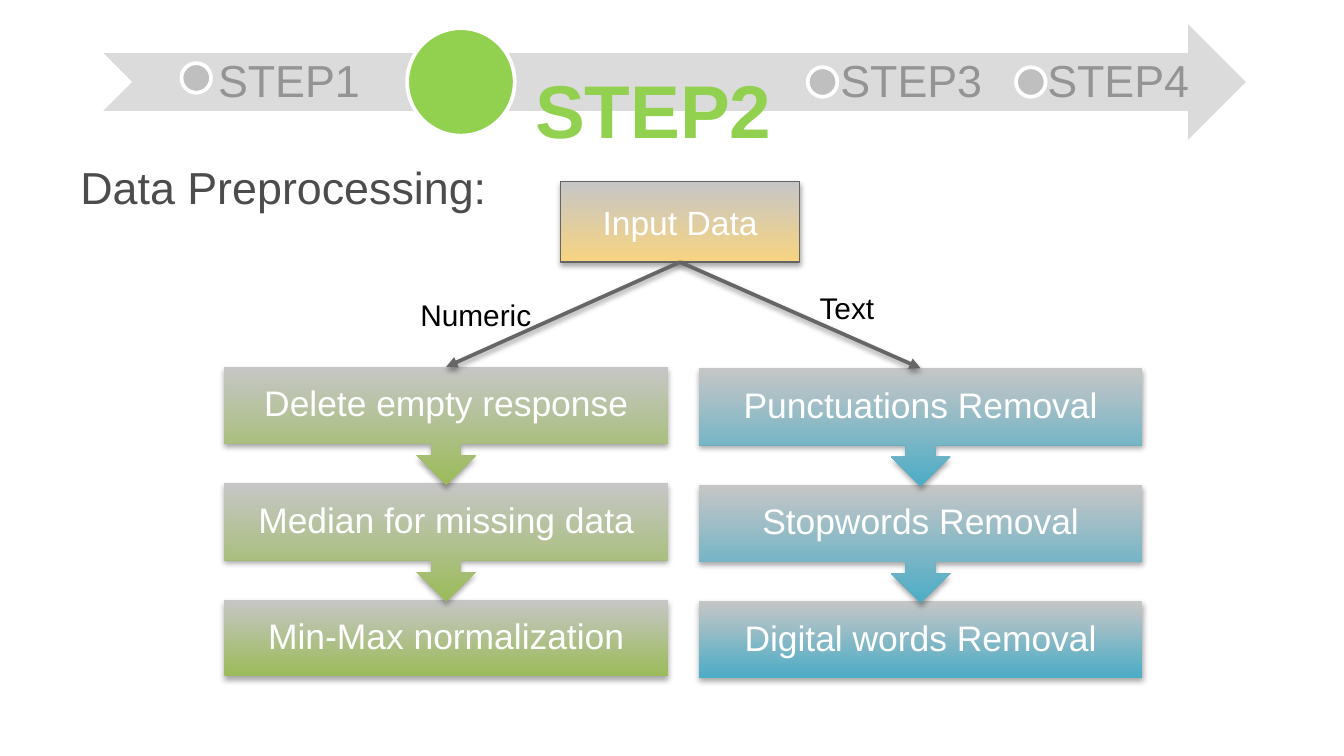
from lxml.etree import SubElement
from pptx import Presentation
from pptx.dml.color import RGBColor
from pptx.enum.shapes import MSO_CONNECTOR, MSO_SHAPE
from pptx.enum.text import MSO_ANCHOR, PP_ALIGN
from pptx.oxml.ns import qn
from pptx.util import Inches, Pt

COLUMNS, ROWS = 100, 56.25  # grid cells of a tenth of an inch

WHITE = RGBColor(0xFF, 0xFF, 0xFF)
BLACK = RGBColor(0x00, 0x00, 0x00)
BAND_GRAY = RGBColor(0xDB, 0xDB, 0xDB)
DOT_GRAY = RGBColor(0xBF, 0xBF, 0xBF)
STEP_GRAY = RGBColor(0x94, 0x94, 0x94)
TITLE_GRAY = RGBColor(0x4C, 0x4C, 0x4C)
ARROW_GRAY = RGBColor(0x66, 0x66, 0x66)
BORDER_GRAY = RGBColor(0x64, 0x64, 0x64)
FADE_GRAY = RGBColor(0xC6, 0xC6, 0xC6)
ACTIVE_GREEN = RGBColor(0x92, 0xD0, 0x50)
NUMERIC_GREEN = RGBColor(0x9B, 0xBB, 0x59)
TEXT_BLUE = RGBColor(0x4B, 0xAC, 0xC6)
INPUT_YELLOW = RGBColor(0xF7, 0xD4, 0x81)

BOX_WIDTH, BOX_HEIGHT, CALLOUT_HEIGHT, BOX_PITCH = 33, 5.7, 8.8, 8.67


def cells(*counts):
    return [Inches(count / 10) for count in counts]


def write(shape, text, size, color, align=PP_ALIGN.CENTER, anchor=MSO_ANCHOR.MIDDLE,
          inset=None, bold=False, wrap=True, line_spacing=None):
    """Put one styled paragraph in a shape; the inset is in cells."""
    frame = shape.text_frame
    frame.word_wrap = wrap
    frame.vertical_anchor = anchor
    if inset is not None:
        frame.margin_left = frame.margin_right = Inches(inset / 10)
        frame.margin_top = frame.margin_bottom = Inches(inset / 10)
    paragraph = frame.paragraphs[0]
    paragraph.text = text
    paragraph.alignment = align
    paragraph.line_spacing = line_spacing
    paragraph.font.name = "Arial"
    paragraph.font.size = Pt(size)
    paragraph.font.bold = bold
    paragraph.font.color.rgb = color


def add_label(slide, place, text, size, color, **style):
    write(slide.shapes.add_textbox(*cells(*place)), text, size, color, **style)


def add_plain_shape(slide, kind, place, fill, line=None):
    shape = slide.shapes.add_shape(kind, *cells(*place))
    shape.shadow.inherit = False
    shape.fill.solid()
    shape.fill.fore_color.rgb = fill
    if line is None:
        shape.line.fill.background()
    else:
        shape.line.color.rgb = line
        shape.line.width = Pt(2)
    return shape


def add_shadow(properties, opacity, distance):
    """Cast a soft shadow straight down from the owner of these properties."""
    effects = properties.find(qn("a:effectLst"))
    if effects is None:
        effects = SubElement(properties, qn("a:effectLst"))
    shadow = SubElement(effects, qn("a:outerShdw"), blurRad=str(Pt(3.1)),
                        dist=str(Pt(distance)), dir="5400000", rotWithShape="0")
    color = SubElement(shadow, qn("a:srgbClr"), val=str(BLACK))
    SubElement(color, qn("a:alpha"), val=str(opacity * 1000))


def add_gradient_box(slide, kind, place, color, line=None):
    """Add a shadowed shape that runs from gray at the top to a colour."""
    shape = add_plain_shape(slide, kind, place, color, line)
    shape.fill.gradient()
    shape.fill.gradient_angle = 90
    for stop, stop_color in zip(shape.fill.gradient_stops, (color, FADE_GRAY)):
        stop.color.rgb = stop_color
    add_shadow(shape.element.spPr, 35, 1.8)
    return shape


def add_process(slide, left, top, color, names):
    """Stack the boxes of one branch from the last up; return the first box."""
    last = len(names) - 1
    for index in range(last, -1, -1):
        kind, height = MSO_SHAPE.DOWN_ARROW_CALLOUT, CALLOUT_HEIGHT
        if index == last:
            kind, height = MSO_SHAPE.RECTANGLE, BOX_HEIGHT
        place = (left, top + index * BOX_PITCH, BOX_WIDTH, height)
        box = add_gradient_box(slide, kind, place, color)
        write(box, names[index], 19, WHITE, inset=1.5, line_spacing=0.9)
    return box


def add_branch_arrow(slide, source, target):
    arrow = slide.shapes.add_connector(MSO_CONNECTOR.STRAIGHT, 0, 0, 0, 0)
    arrow.begin_connect(source, 2)
    arrow.end_connect(target, 0)
    arrow.line.color.rgb = ARROW_GRAY
    arrow.line.width = Pt(2)
    properties = arrow.element.spPr
    SubElement(properties.find(qn("a:ln")), qn("a:tailEnd"), type="triangle")
    add_shadow(properties, 38, 1.6)


def add_timeline(slide):
    add_plain_shape(slide, MSO_SHAPE.NOTCHED_RIGHT_ARROW, (7.7, 1.8, 85, 8.6), BAND_GRAY)
    add_label(slide, (33.7, 8.1, 29.8, 6.4), "STEP2", 40, ACTIVE_GREEN, bold=True,
              anchor=MSO_ANCHOR.BOTTOM, inset=3.1, line_spacing=0.9)
    add_plain_shape(slide, MSO_SHAPE.OVAL, (30.3, 2.1, 8, 8), ACTIVE_GREEN, WHITE)
    other_steps = (
        ("STEP1", 14.1, 2.6, MSO_ANCHOR.TOP, 13.5, 4.7),
        ("STEP3", 60.4, 1.2, MSO_ANCHOR.BOTTOM, 60.1, 5),
        ("STEP4", 75.8, 2.6, MSO_ANCHOR.TOP, 75.6, 5),
    )
    for name, left, top, anchor, dot_left, dot_top in other_steps:
        add_label(slide, (left, top, 14.8, 8.6), name, 24, STEP_GRAY,
                  anchor=anchor, inset=1.9, line_spacing=0.9)
        add_plain_shape(slide, MSO_SHAPE.OVAL, (dot_left, dot_top, 2.2, 2.2),
                        DOT_GRAY, WHITE)


def add_flow(slide):
    numeric = add_process(slide, 16.7, 27.3, NUMERIC_GREEN, (
        "Delete empty response", "Median for missing data", "Min-Max normalization"))
    text = add_process(slide, 52, 27.4, TEXT_BLUE, (
        "Punctuations Removal", "Stopwords Removal", "Digital words Removal"))
    source = add_gradient_box(slide, MSO_SHAPE.RECTANGLE, (41.7, 13.5, 17.8, 6),
                              INPUT_YELLOW, BORDER_GRAY)
    source.line.width = Pt(0.75)
    write(source, "Input Data", 18, WHITE)
    branches = (
        (text, "Text", (60, 21.1, 6.1, 3.7)),
        (numeric, "Numeric", (30.3, 21.6, 10.4, 3.7)),
    )
    for target, name, place in branches:
        add_branch_arrow(slide, source, target)
        add_label(slide, place, name, 16, BLACK, align=PP_ALIGN.LEFT,
                  anchor=MSO_ANCHOR.TOP, wrap=False)


def main():
    presentation = Presentation()
    presentation.slide_width, presentation.slide_height = cells(COLUMNS, ROWS)
    slide = presentation.slides.add_slide(presentation.slide_layouts[6])
    add_timeline(slide)
    add_label(slide, (5, 11.4, 90, 39.3), "Data Preprocessing:", 24, TITLE_GRAY,
              align=PP_ALIGN.LEFT, anchor=MSO_ANCHOR.TOP)
    add_flow(slide)
    presentation.save("out.pptx")


if __name__ == "__main__":
    main()
